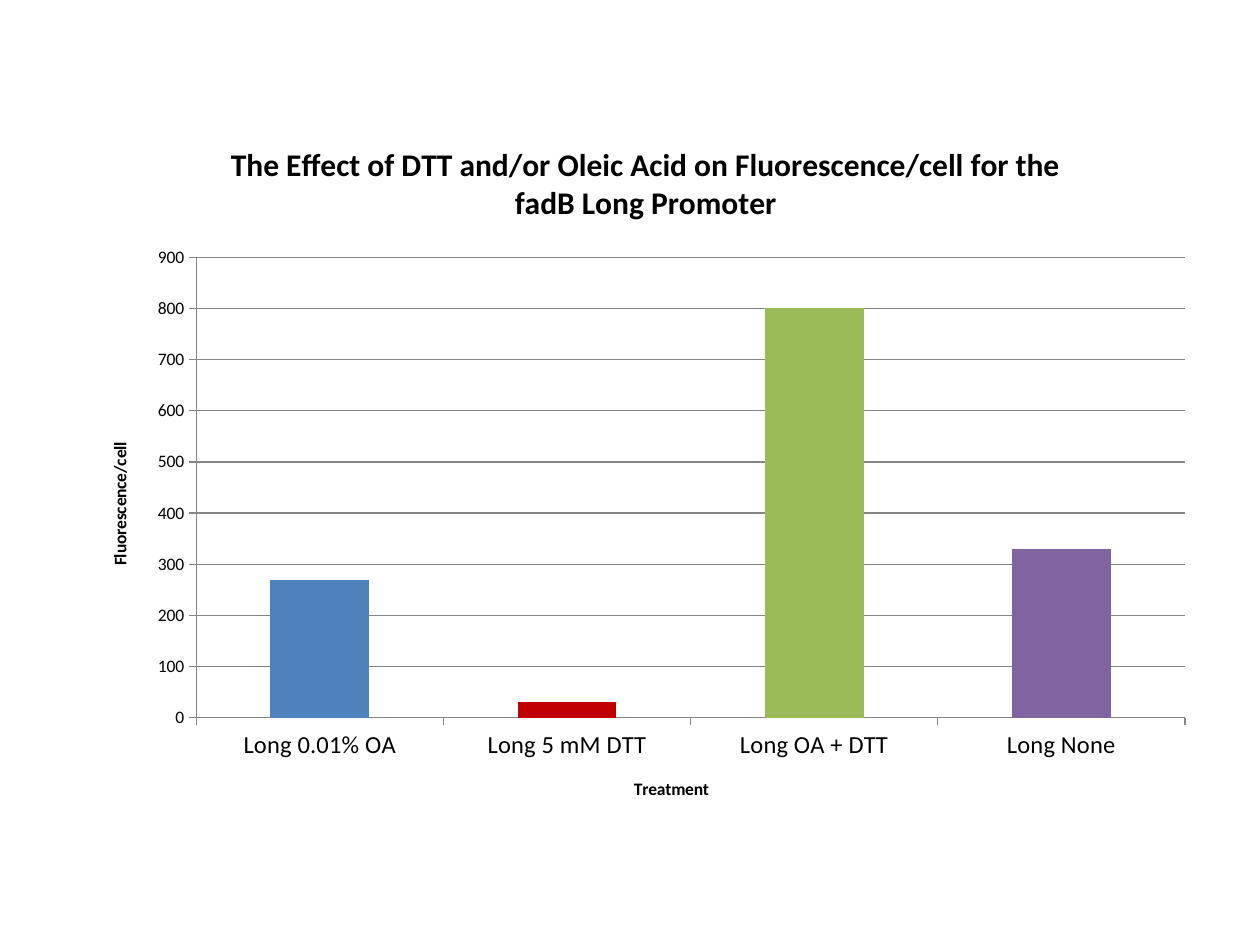
from pptx import Presentation
from pptx.chart.data import CategoryChartData as Data
from pptx.dml.color import RGBColor
from pptx.enum.chart import XL_CHART_TYPE as Kind, XL_TICK_MARK as Tick
from pptx.oxml import parse_xml
from pptx.oxml.ns import nsdecls
from pptx.util import Pt

BLACK = RGBColor(0, 0, 0)
GRAY = RGBColor(0x86, 0x86, 0x86)
BLUE = RGBColor(0x4F, 0x81, 0xBD)
RED = RGBColor(0xC0, 0, 0)
GREEN = RGBColor(0x9B, 0xBB, 0x59)
PURPLE = RGBColor(0x80, 0x64, 0xA2)

TITLE = ("The Effect of DTT and/or Oleic Acid on Fluorescence/cell "
         "for the fadB Long Promoter")
BARS = [
    ("Long 0.01% OA", 270, BLUE),
    ("Long 5 mM DTT", 30, RED),
    ("Long OA + DTT", 800, GREEN),
    ("Long None", 330, PURPLE),
]


def set_font(font, size, bold=False):
    font.name = "Calibri"
    font.size = Pt(size)
    font.bold = bold
    font.color.rgb = BLACK


def set_title(owner, text, size):
    """Title a chart or an axis."""
    frame = (owner.chart_title if hasattr(owner, "chart_title")
             else owner.axis_title).text_frame
    frame.text = text
    set_font(frame.paragraphs[0].font, size, True)


def style_axis(axis, title, size):
    set_title(axis, title, 10)
    set_font(axis.tick_labels.font, size)
    axis.major_tick_mark = Tick.OUTSIDE
    axis.minor_tick_mark = Tick.NONE
    axis.format.line.color.rgb = GRAY
    axis.format.line.width = Pt(0.75)


def place_plot(chart, **box):
    """Fix the inner plot area, as fractions of the chart."""
    sizes = "".join(f'<c:{key} val="{val}"/>' for key, val in box.items())
    layout = parse_xml(
        f'<c:layout {nsdecls("c")}><c:manualLayout>'
        '<c:layoutTarget val="inner"/>'
        '<c:xMode val="edge"/><c:yMode val="edge"/>'
        f'{sizes}</c:manualLayout></c:layout>')
    area = chart.element.xpath("c:chart/c:plotArea")[0]
    for old in area.xpath("c:layout"):
        area.remove(old)
    area.insert(0, layout)


def add_bars(slide, left, top, width, height):
    data = Data(number_format="0")
    data.categories = [name for name, _, _ in BARS]
    data.add_series("Series 1", [val for _, val, _ in BARS])
    chart = slide.shapes.add_chart(
        Kind.COLUMN_CLUSTERED, Pt(left), Pt(top), Pt(width), Pt(height), data
    ).chart
    set_font(chart.font, 10)
    chart.has_legend = False
    set_title(chart, TITLE, 18)
    place_plot(chart, x=0.1, y=0.2, w=0.88, h=0.65)

    style_axis(chart.category_axis, "Treatment", 14)
    axis = chart.value_axis
    style_axis(axis, "Fluorescence/cell", 10)
    axis.minimum_scale, axis.maximum_scale, axis.major_unit = 0, 900, 100
    axis.tick_labels.number_format = "0"
    axis.tick_labels.number_format_is_linked = False
    axis.has_major_gridlines = True
    grid = axis.major_gridlines.format.line
    grid.color.rgb = GRAY
    grid.width = Pt(0.75)

    plot = chart.plots[0]
    plot.gap_width = 150
    plot.vary_by_categories = False
    series = plot.series[0]
    series.format.fill.solid()
    series.format.fill.fore_color.rgb = BLUE
    for i, (_, _, color) in enumerate(BARS):
        fill = series.points[i].format.fill
        fill.solid()
        fill.fore_color.rgb = color


def main():
    deck = Presentation()
    deck.slide_width, deck.slide_height = Pt(720), Pt(540)
    slide = deck.slides.add_slide(deck.slide_layouts[6])
    add_bars(slide, 48, 66, 642, 405)
    deck.save("out.pptx")


if __name__ == "__main__":
    main()
